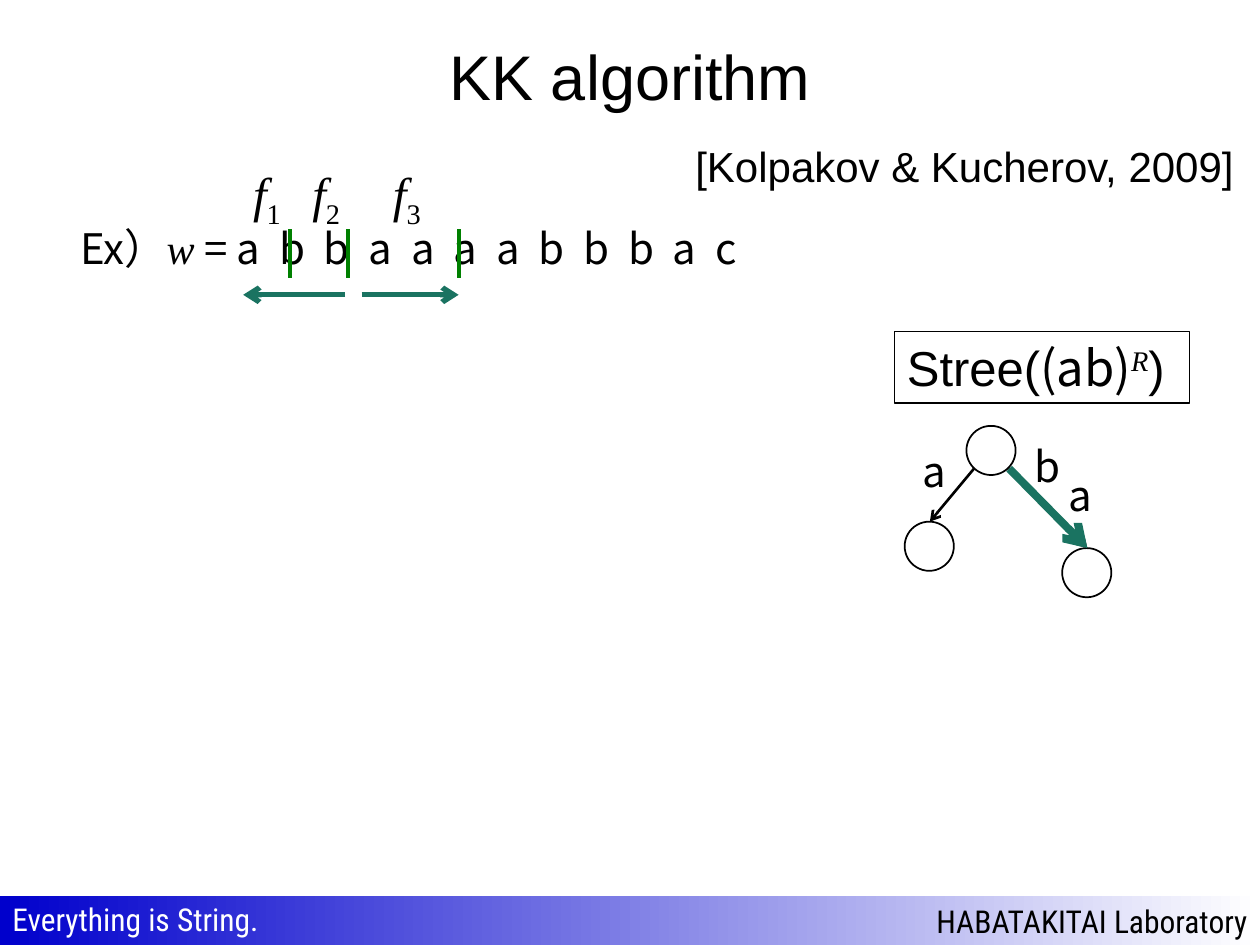
from lxml.etree import SubElement
from pptx import Presentation
from pptx.dml.color import RGBColor
from pptx.enum.shapes import MSO_CONNECTOR, MSO_SHAPE
from pptx.enum.text import MSO_ANCHOR, MSO_AUTO_SIZE, PP_ALIGN
from pptx.oxml.ns import qn
from pptx.util import Inches, Pt

SANS, CJK, SERIF, FOOTER = "Arial", "Noto Sans CJK JP", "Times New Roman", "Roboto Condensed"
BLACK, WHITE, GREEN, TEAL, BLUE = "000000", "FFFFFF", "008000", "1A7361", "0000CC"

TITLE = [("KK algorithm", SANS, 0)]
CITATION = [("[Kolpakov & Kucherov, 2009]", SANS, 0)]
EXAMPLE = [("Ex）", CJK, 0), ("w", SERIF, 0), (" = a  b  b  a  a  a  a  b  b  b  a  c", CJK, 0)]
TREE_NAME = [("Stree(", SANS, 0), ("(ab)", CJK, 0), ("R", SERIF, 30), (")", SANS, 0)]
FACTORS = [("1", 1.91), ("2", 2.38), ("3", 3.02)]
FACTOR_ENDS = [2.3, 2.76, 3.64]
EXTENSIONS = [(2.87, 3.64), (2.74, 1.93)]
NODES = [(7.67, 3.38), (7.18, 4.14), (8.43, 4.35)]
NODE_SIZE = 0.39
LEFT_EDGE = ((7.73, 3.72), (7.38, 4.14))
RIGHT_EDGE = ((8.01, 3.72), (8.63, 4.35))
EDGES = [(LEFT_EDGE, BLACK, 1.5), (RIGHT_EDGE, BLACK, 1.5), (RIGHT_EDGE, TEAL, 4.5)]
EDGE_LABELS = [("a", 7.22, 3.49, 0.41), ("a", 8.38, 3.68, 0.41), ("b", 8.11, 3.45, 0.43)]


def color(value):
    return RGBColor.from_string(value)


def write(shape, spans, size, ink=BLACK, align=PP_ALIGN.LEFT, anchor=MSO_ANCHOR.TOP, wrap=False):
    frame = shape.text_frame
    frame.word_wrap = wrap
    frame.vertical_anchor = anchor
    para = frame.paragraphs[0]
    para.alignment = align
    for text, font, baseline in spans:
        span = para.add_run()
        span.text = text
        span.font.name = font
        span.font.size = Pt(size)
        span.font.color.rgb = color(ink)
        span.font.italic = font == SERIF and not text.isdigit()
        properties = span.font._element
        SubElement(properties, qn("a:ea")).set("typeface", font)
        if baseline:
            properties.set("baseline", str(baseline * 1000))


def add_text(page, at, spans, size, grow=True, **style):
    box = page.shapes.add_textbox(*map(Inches, at))
    write(box, spans, size, **style)
    if grow:
        box.text_frame.auto_size = MSO_AUTO_SIZE.SHAPE_TO_FIT_TEXT


def add_outline(page, kind, at, width):
    shape = page.shapes.add_shape(kind, *map(Inches, at))
    shape.shadow.inherit = False
    shape.fill.background()
    shape.line.color.rgb = color(BLACK)
    shape.line.width = Pt(width)
    return shape


def add_line(page, start, end, ink, width, arrow=False):
    line = page.shapes.add_connector(MSO_CONNECTOR.STRAIGHT, *map(Inches, start + end))
    line.line.color.rgb = color(ink)
    line.line.width = Pt(width)
    if arrow:
        SubElement(line.line._get_or_add_ln(), qn("a:tailEnd")).set("type", "arrow")
    SubElement(line._element.spPr, qn("a:effectLst"))


def add_footer(page):
    band = page.shapes.add_shape(MSO_SHAPE.RECTANGLE, *map(Inches, (0, 7.11, 10, 0.39)))
    band.shadow.inherit = False
    band.line.fill.background()
    band.fill.gradient()
    band.fill.gradient_angle = 0
    for stop, (position, value) in zip(band.fill.gradient_stops, [(0, BLUE), (1, WHITE)]):
        stop.position = position
        stop.color.rgb = color(value)
    write(band, [("HABATAKITAI Laboratory", FOOTER, 0)], 18,
          align=PP_ALIGN.RIGHT, anchor=MSO_ANCHOR.MIDDLE)
    add_text(page, (0, 7.09, 2.22, 0.4), [("Everything is String.", FOOTER, 0)], 18, ink=WHITE)


def add_example(page):
    add_text(page, (0.54, 1.72, 6.94, 0.91), EXAMPLE, 24, grow=False, wrap=True)
    for x in FACTOR_ENDS:
        add_line(page, (x, 1.82), (x, 2.21), GREEN, 2.25)
    for start, end in EXTENSIONS:
        add_line(page, (start, 2.34), (end, 2.34), TEAL, 3, arrow=True)
    for index, x in FACTORS:
        add_text(page, (x, 1.25, 0.51, 0.57), [("f", SERIF, 0), (index, SERIF, -25)], 28)


def add_tree(page):
    name = add_outline(page, MSO_SHAPE.RECTANGLE, (7.1, 2.63, 2.34, 0.57), 0.75)
    write(name, TREE_NAME, 28)
    for x, y in NODES:
        add_outline(page, MSO_SHAPE.OVAL, (x, y, NODE_SIZE, NODE_SIZE), 1)
    for (start, end), ink, width in EDGES:
        add_line(page, start, end, ink, width, arrow=True)
    for letter, x, y, width in EDGE_LABELS:
        add_text(page, (x, y, width, 0.5), [(letter, CJK, 0)], 24)


def main():
    deck = Presentation()
    deck.slide_width, deck.slide_height = Inches(10), Inches(7.5)
    page = deck.slides.add_slide(deck.slide_layouts[6])
    add_footer(page)
    add_text(page, (0.5, 0.13, 9, 0.93), TITLE, 36, grow=False,
             align=PP_ALIGN.CENTER, anchor=MSO_ANCHOR.MIDDLE, wrap=True)
    add_text(page, (5.42, 1.07, 4.52, 0.5), CITATION, 24)
    add_example(page)
    add_tree(page)
    deck.save("out.pptx")


if __name__ == "__main__":
    main()
